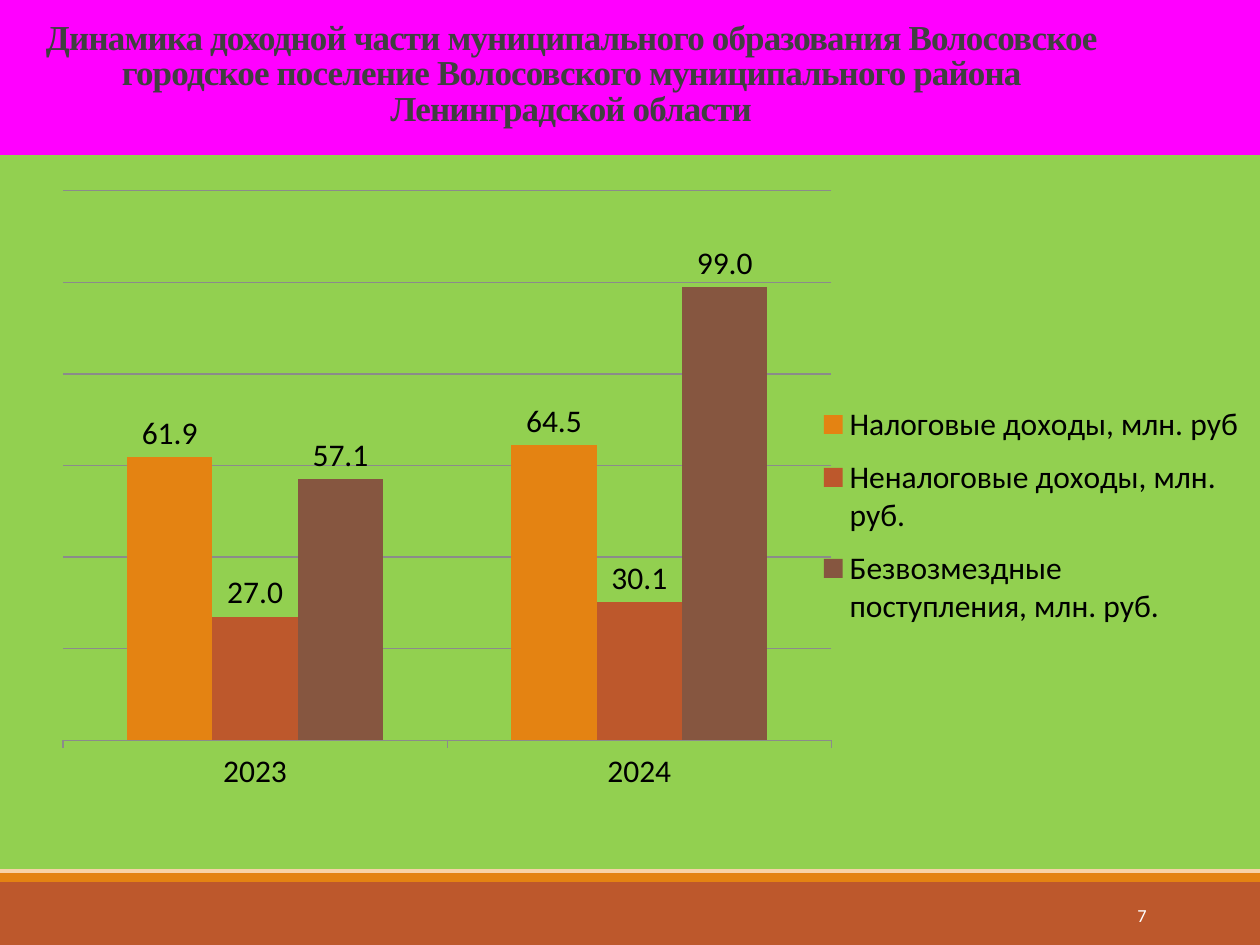
from copy import deepcopy

from lxml import etree
from pptx import Presentation
from pptx.chart.data import CategoryChartData
from pptx.dml.color import RGBColor
from pptx.enum.chart import XL_CHART_TYPE as ChartType, XL_LABEL_POSITION as LabelPos
from pptx.enum.chart import XL_LEGEND_POSITION as LegendPos, XL_TICK_MARK as Tick
from pptx.enum.shapes import MSO_SHAPE as Shape
from pptx.enum.text import MSO_ANCHOR as Anchor, PP_ALIGN as Align
from pptx.oxml import parse_xml
from pptx.oxml.ns import nsdecls, qn
from pptx.util import Pt

PX = 914400 / 126
rgb = RGBColor.from_string


def px(*lengths):
    return [round(length * PX) for length in lengths]


def set_layout(parent, index, **values):
    """Give a chart part a manual layout in fractions of the chart area."""
    for old in parent.findall(qn("c:layout")):
        parent.remove(old)
    layout = parse_xml(f"<c:layout {nsdecls('c')}><c:manualLayout/></c:layout>")
    for name, value in values.items():
        etree.SubElement(layout[0], qn(f"c:{name}")).set("val", str(value))
    parent.insert(index, layout)


deck = Presentation()
deck.slide_width, deck.slide_height = px(1260, 945)
page = deck.slides.add_slide(deck.slide_layouts[6])

# Background gradient, running from top to bottom
background = page.background.fill
background.gradient()
background.gradient_angle = 270
stop_list = page.background._cSld.find(".//" + qn("a:gsLst"))
for extra in range(2):
    stop_list.append(deepcopy(stop_list[0]))
gradient = [(0.55, "FF00FF"), (0.74, "F6C791"), (0.83, "F6C791"), (1, "F9DAB6")]
for stop, (position, color) in zip(background.gradient_stops, gradient):
    stop.position = position
    stop.color.rgb = rgb(color)

# Footer bands
for top, height, color in [(882, 63, "BD582C"), (873, 9, "E48312")]:
    band = page.shapes.add_shape(Shape.RECTANGLE, *px(0, top, 1260, height))
    band.shadow.inherit = False
    band.fill.solid()
    band.fill.fore_color.rgb = rgb(color)
    band.line.fill.background()

# Title and page number
title = ("Динамика доходной части муниципального образования Волосовское "
         "городское поселение Волосовского муниципального района "
         "Ленинградской области")
texts = [
    (title, (25, 0, 1092, 135), Anchor.BOTTOM, Align.CENTER, 20, "Times New Roman", "404040"),
    ("7", (1023, 890, 136, 50), Anchor.MIDDLE, Align.RIGHT, 10.5, "Calibri", "FFFFFF"),
]
for text, place, anchor, align, size, font, color in texts:
    box = page.shapes.add_textbox(*px(*place))
    frame = box.text_frame
    frame.word_wrap = True
    frame.vertical_anchor = anchor
    para = frame.paragraphs[0]
    span = para.add_run()
    span.text = text
    para.alignment = align
    para.font.size = Pt(size)
    para.font.name = font
    para.font.color.rgb = rgb(color)
    if text == title:
        para.line_spacing = 0.85
        para.font.bold = True
        span.font._element.set("spc", "-50")

# Income chart
data = CategoryChartData(number_format="#,##0.0")
data.categories = ["2023", "2024"]
income = [
    ("Налоговые доходы, млн. руб", (61.9, 64.5), "E48312"),
    ("Неналоговые доходы, млн. руб.", (27.0, 30.1), "BD582C"),
    ("Безвозмездные поступления, млн. руб.", (57.1, 99.0), "865640"),
]
for name, values, color in income:
    data.add_series(name, values)
chart = page.shapes.add_chart(
    ChartType.COLUMN_CLUSTERED, *px(0, 155, 1260, 714), data).chart
chart.has_title = False
chart.font.size = Pt(18)
chart.font.name = "Calibri"
chart.font.color.rgb = rgb("000000")

plot = chart.plots[0]
plot.gap_width = 150
plot.overlap = 0
plot.vary_by_categories = False
for series, (name, values, color) in zip(plot.series, income):
    series.format.fill.solid()
    series.format.fill.fore_color.rgb = rgb(color)
    labels = series.data_labels
    labels.show_value = True
    labels.number_format = "#,##0.0"
    labels.number_format_is_linked = False
    labels.position = LabelPos.OUTSIDE_END

years = chart.category_axis
years.major_tick_mark = Tick.OUTSIDE
amounts = chart.value_axis
amounts.visible = False
amounts.minimum_scale = 0
amounts.maximum_scale = 120
amounts.major_unit = 20
amounts.has_major_gridlines = True
for line in (years.format.line, amounts.major_gridlines.format.line):
    line.color.rgb = rgb("8B8B8B")
    line.width = Pt(0.75)

chart.has_legend = True
legend = chart.legend
legend.position = LegendPos.RIGHT
legend.include_in_layout = False
set_layout(legend._element, 1, xMode="edge", yMode="edge", x=0.67, y=0.33, w=0.33, h=0.35)

# Chart and plot backgrounds
chart_space = chart._chartSpace
plot_area = chart_space.chart.plotArea
set_layout(plot_area, 0, layoutTarget="inner", xMode="edge", yMode="edge",
           x=0.05, y=0.05, w=0.61, h=0.77)
green = parse_xml(
    f"<c:spPr {nsdecls('c', 'a')}><a:solidFill><a:srgbClr val='92D050'/></a:solidFill>"
    "<a:ln><a:noFill/></a:ln></c:spPr>")
plot_area.append(deepcopy(green))
chart_space.chart.addnext(green)

deck.save("out.pptx")
